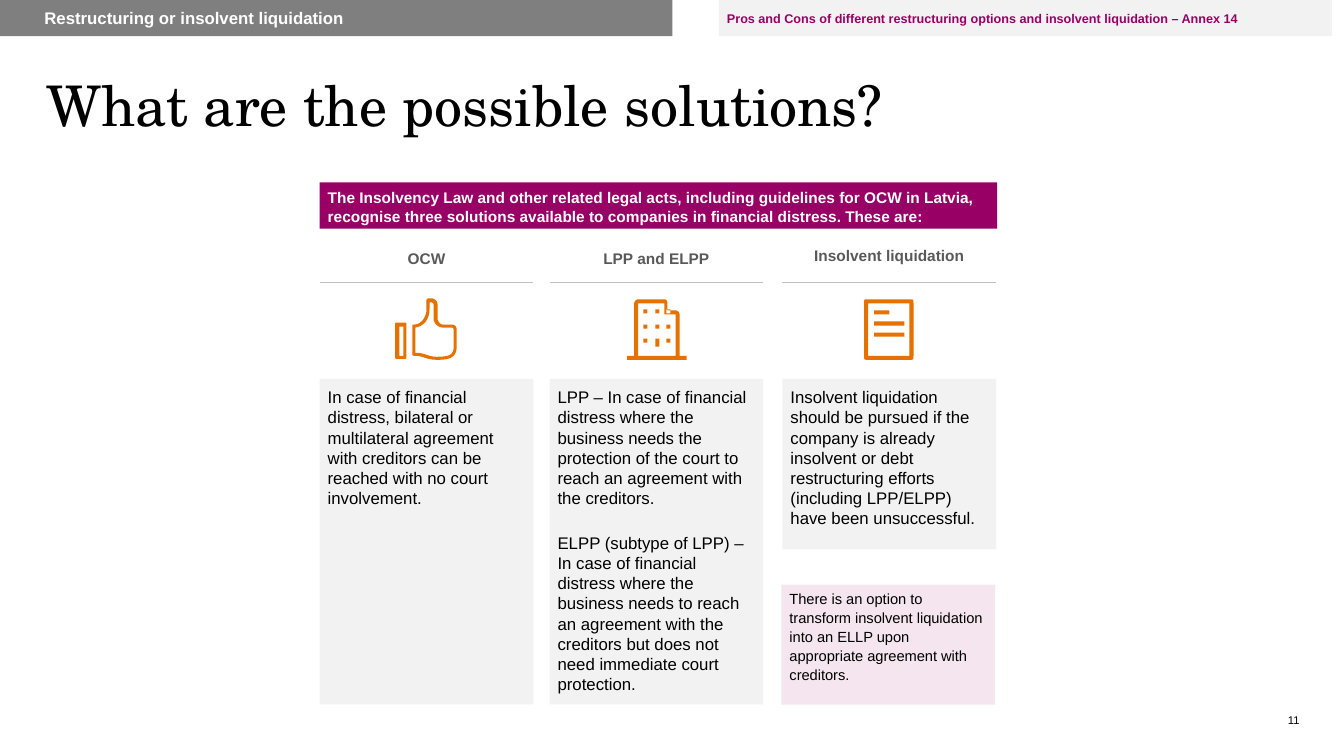
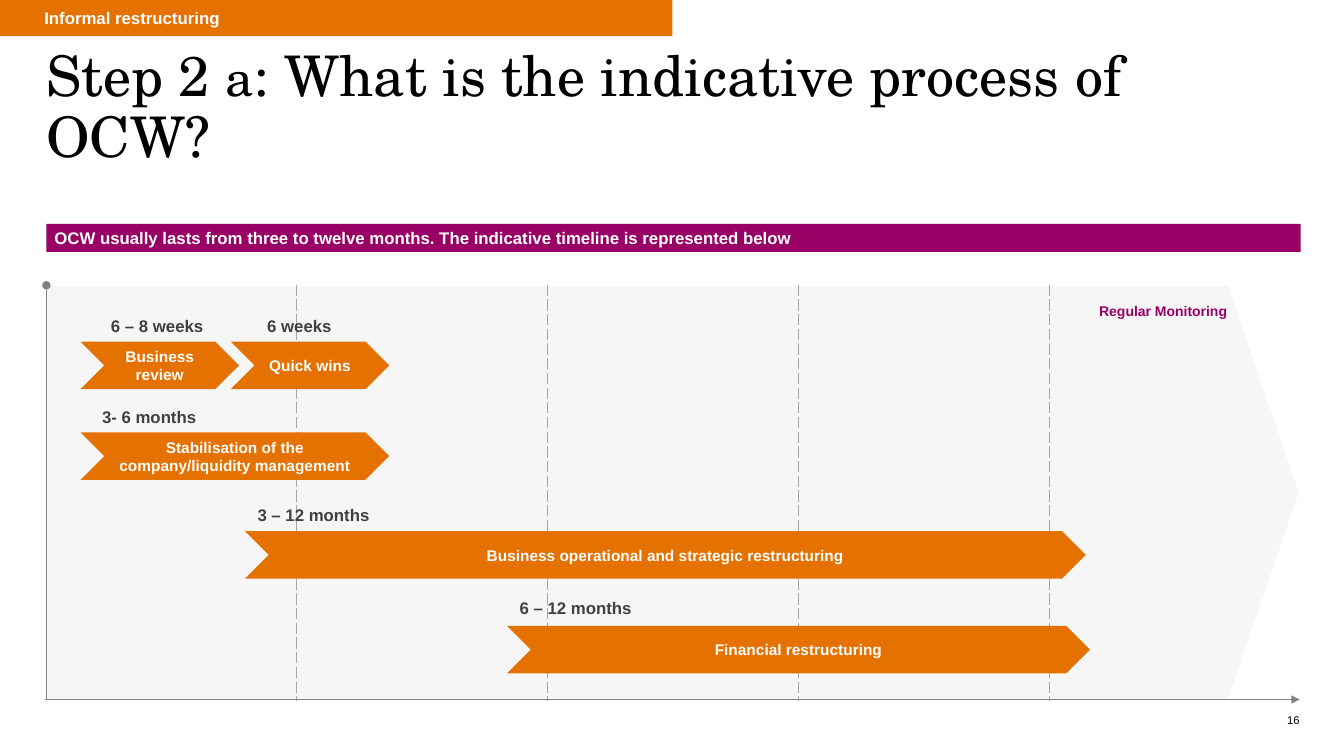
"""Build two slides on restructuring: the possible solutions and the OCW timeline."""
from dataclasses import dataclass
from typing import Any, Optional

from lxml import etree
from pptx import Presentation
from pptx.dml.color import RGBColor
from pptx.enum.shapes import MSO_CONNECTOR, MSO_SHAPE
from pptx.enum.text import MSO_ANCHOR, MSO_AUTO_SIZE, PP_ALIGN
from pptx.oxml.ns import qn
from pptx.util import Pt

PX = 9144
RECT, PLATE, CHEVRON = MSO_SHAPE.RECTANGLE, MSO_SHAPE.PENTAGON, MSO_SHAPE.CHEVRON
STRAIGHT, FIXED = MSO_CONNECTOR.STRAIGHT, MSO_AUTO_SIZE.NONE
TOP, MIDDLE = MSO_ANCHOR.TOP, MSO_ANCHOR.MIDDLE
LEFT, CENTER, RIGHT = PP_ALIGN.LEFT, PP_ALIGN.CENTER, PP_ALIGN.RIGHT

BLACK = RGBColor(0, 0, 0)
WHITE = RGBColor(255, 255, 255)
PLUM = RGBColor(0x99, 0x00, 0x66)
ORANGE = RGBColor(0xE5, 0x71, 0x00)
PALE = RGBColor(0xF2, 0xF2, 0xF2)
SILVER = RGBColor(0xD9, 0xD9, 0xD9)
RULE = RGBColor(0xBF, 0xBF, 0xBF)
DASH = RGBColor(0xA6, 0xA6, 0xA6)
AXIS = RGBColor(0x80, 0x80, 0x80)
BAND = RGBColor(0x7F, 0x7F, 0x7F)
HEAD = RGBColor(0x59, 0x59, 0x59)
DARK = RGBColor(0x40, 0x40, 0x40)

Path = list[tuple[float, ...]]


@dataclass(frozen=True)
class Look:
    """Font and paragraph settings of a text."""
    size: float
    color: RGBColor
    bold: bool = False
    align: Any = LEFT
    anchor: Any = TOP
    inset: tuple[int, ...] = (0, 0, 0, 0)
    after: float = 0
    before: float = 0
    pitch: float = 1.0
    font: str = "Arial"


@dataclass(frozen=True)
class Box:
    """A text box, or a shape when a kind is given."""
    at: tuple[int, int, int, int]
    look: Look
    texts: tuple[str, ...] = ()
    fill: Optional[RGBColor] = None
    kind: Any = None
    alpha: int = 100


@dataclass(frozen=True)
class Line:
    """A straight line with optional ends."""
    start: tuple[int, int]
    stop: tuple[int, int]
    color: RGBColor
    width: float
    head: str = ""
    tail: str = ""


@dataclass(frozen=True)
class Step:
    """A timeline step with its duration label."""
    left: int
    top: int
    width: int
    name: str
    time: str
    label: tuple[int, int]


TITLE = Look(40, BLACK, anchor=MIDDLE, pitch=0.9, font="TeX Gyre Schola")
PAGE = Look(8, BLACK, align=RIGHT, anchor=MIDDLE)
TAB = Look(12, WHITE, True, anchor=MIDDLE, inset=(44, 8, 10, 8))
ANNEX = Look(9, PLUM, True, anchor=MIDDLE, inset=(8, 5, 8, 5))
LEAD = Look(11, WHITE, True, inset=(8, 4, 8, 4), after=8, pitch=1.07)
SPAN = Look(12, WHITE, True, inset=(8, 4, 8, 4), after=8)
BODY = Look(12, BLACK, inset=(8, 8, 8, 8), after=1.7, before=16)
NOTE = Look(10.5, BLACK, inset=(8, 4, 8, 4), after=8, pitch=1.07)
CAP = Look(11, HEAD, True, CENTER, after=1.7)
STEP = Look(11, WHITE, True, CENTER, MIDDLE, (10, 5, 10, 5))
TIME = Look(12, DARK, True, CENTER, inset=(10, 5, 10, 5), after=2)
WATCH = Look(10, PLUM, True, CENTER, inset=(0, 5, 10, 5))

COLUMNS = (
    (317, 247, "OCW", 323,
     ("In case of financial distress, bilateral or multilateral agreement with "
      "creditors can be reached with no court involvement.",)),
    (545, 247, "LPP and ELPP", 323,
     ("LPP – In case of financial distress where the business needs the "
      "protection of the court to reach an agreement with the creditors.",
      "ELPP (subtype of LPP) – In case of financial distress where the business "
      "needs to reach an agreement with the creditors but does not need "
      "immediate court protection.")),
    (776, 244, "Insolvent liquidation", 169,
     ("Insolvent liquidation should be pursued if the company is already "
      "insolvent or debt restructuring efforts (including LPP/ELPP) have been "
      "unsuccessful.",)),
)

STEPS = (
    Step(80, 339, 157, "Business review", "6 – 8 weeks", (88, 308)),
    Step(229, 339, 157, "Quick wins", "6 weeks", (229, 308)),
    Step(80, 429, 306, "Stabilisation of the company/liquidity management",
         "3- 6 months", (80, 399)),
    Step(243, 527, 834, "Business operational and strategic restructuring",
         "3 – 12 months", (243, 496)),
    Step(503, 621, 578, "Financial restructuring", "6 – 12 months", (503, 588)),
)


def block(x: int, y: int, w: int, h: int) -> Path:
    """Return the outline of a rectangle."""
    return [(x, y), (x + w, y), (x + w, y + h), (x, y + h)]


def frame(x: int, y: int, w: int, h: int, r: int) -> Path:
    """Return the outline of a rectangle with round corners."""
    a, b = x + w, y + h
    return [(x + r, y), (a - r, y), (a, y, a, y, a, y + r), (a, b - r),
            (a, b, a, b, a - r, b), (x + r, b), (x, b, x, b, x, b - r),
            (x, y + r), (x, y, x, y, x + r, y)]


THUMB: list[Path] = [
    frame(392, 320, 11, 36, 2),
    block(396, 324, 4, 29),
    [(448, 322), (439, 322), (437, 322, 434, 319, 434, 316), (434, 302),
     (434, 299, 431, 296, 428, 296), (425, 296), (424, 296, 423, 297, 423, 298),
     (423, 307), (423, 314, 418, 322, 411, 322), (410, 322, 409, 322, 409, 323),
     (409, 351), (409, 353, 410, 353, 411, 353), (420, 353, 423, 357, 433, 357),
     (444, 357, 453, 356, 453, 344), (453, 327), (453, 324, 451, 322, 448, 322)],
    [(433, 354), (429, 354, 426, 353, 423, 352), (420, 351, 417, 350, 412, 350),
     (412, 325), (420, 324, 426, 317, 426, 307), (426, 300), (428, 300),
     (429, 300, 430, 301, 430, 302), (430, 316), (430, 321, 435, 325, 439, 325),
     (448, 325), (449, 325, 450, 326, 450, 327), (450, 344),
     (450, 352, 446, 354, 433, 354)],
]
TOWER: list[Path] = [
    [(674, 353), (674, 312), (674, 310, 672, 308, 670, 308), (662, 308),
     (662, 301), (662, 299, 661, 297, 659, 297), (633, 297),
     (631, 297, 629, 299, 629, 301), (629, 353), (622, 353), (622, 357),
     (681, 357), (681, 353)],
    [(670, 353), (633, 353), (633, 301), (659, 301), (659, 312), (670, 312)],
    *[block(x, y, 4, 8 if (x, y) == (650, 336) else 4)
      for x in (638, 650, 661) for y in (307, 322, 336) if (x, y) != (661, 307)],
    block(661, 307, 4, 4),
]
PAPER: list[Path] = [
    frame(857, 297, 49, 60, 4), block(861, 301, 41, 52),
    *[block(867, y, w, 4) for y, w in ((308, 15), (319, 30), (330, 30))],
]


def trace(path: Path) -> list[tuple[int, int]]:
    """Turn lines and curves into points in EMU."""
    spots = [path[0]]
    for leg in path[1:]:
        if len(leg) == 2:
            spots.append(leg)
            continue
        ends = (spots[-1], leg[:2], leg[2:4], leg[4:])
        for n in range(1, 9):
            t = n / 8
            mix = ((1 - t) ** 3, 3 * t * (1 - t) ** 2, 3 * t * t * (1 - t), t ** 3)
            spots.append(tuple(sum(m * e[i] for m, e in zip(mix, ends))
                               for i in (0, 1)))
    return [(round(x * PX), round(y * PX)) for x, y in spots]


def icon(slide: Any, paths: list[Path]) -> None:
    """Draw an icon as one freeform with holes."""
    pen = None
    for path in paths:
        first, *rest = trace(path)
        if pen is None:
            pen = slide.shapes.build_freeform(*first, scale=1.0)
        else:
            pen.move_to(*first)
        pen.add_line_segments(rest, close=True)
    shape = pen.convert_to_shape()
    shape.shadow.inherit = False
    shape.fill.solid()
    shape.fill.fore_color.rgb = ORANGE
    shape.line.fill.background()


def add_run(para: Any, text: str, look: Look, size: float) -> None:
    """Add one run in the given look."""
    run = para.add_run()
    run.text = text
    font = run.font
    font.name, font.size, font.bold = look.font, Pt(size), look.bold
    font.color.rgb = look.color


def set_up(text: Any, look: Look) -> None:
    """Set wrapping, anchor and insets of a text frame."""
    text.word_wrap, text.auto_size = True, FIXED
    text.vertical_anchor = look.anchor
    (text.margin_left, text.margin_top,
     text.margin_right, text.margin_bottom) = (n * PX for n in look.inset)


def set_para(para: Any, look: Look, first: bool) -> None:
    """Set alignment and spacing of a paragraph."""
    para.alignment, para.line_spacing = look.align, look.pitch
    para.space_before = Pt(0 if first else look.before)
    para.space_after = Pt(look.after)


def draw(slide: Any, box: Box) -> Any:
    """Draw a box with its text and return the shape."""
    at = [n * PX for n in box.at]
    if box.kind is None:
        shape = slide.shapes.add_textbox(*at)
    else:
        shape = slide.shapes.add_shape(box.kind, *at)
        shape.shadow.inherit = False
        shape.line.fill.background()
        shape.fill.solid()
        shape.fill.fore_color.rgb = box.fill
        if box.alpha < 100:
            tint = shape.fill._xPr.find(".//" + qn("a:srgbClr"))
            etree.SubElement(tint, qn("a:alpha"), val=str(box.alpha * 1000))
    text = shape.text_frame
    set_up(text, box.look)
    for n, words in enumerate(box.texts):
        para = text.add_paragraph() if n else text.paragraphs[0]
        set_para(para, box.look, n == 0)
        add_run(para, words, box.look, box.look.size)
    return shape


def rule(slide: Any, line: Line) -> None:
    """Draw a straight line."""
    ends = [n * PX for n in line.start + line.stop]
    wire = slide.shapes.add_connector(STRAIGHT, *ends)
    wire.line.color.rgb, wire.line.width = line.color, Pt(line.width)
    for tag, kind in (("a:headEnd", line.head), ("a:tailEnd", line.tail)):
        if kind:
            etree.SubElement(wire.line._get_or_add_ln(), qn(tag), type=kind)
    etree.SubElement(wire._element.spPr, qn("a:effectLst"))


def edge(cell: Any, side: str, color: RGBColor, width: float, dash: str) -> None:
    """Add one border to a table cell."""
    line = etree.SubElement(cell._tc.get_or_add_tcPr(), qn("a:ln" + side),
                            w=str(Pt(width)))
    fill = etree.SubElement(line, qn("a:solidFill"))
    etree.SubElement(fill, qn("a:srgbClr"), val=str(color))
    etree.SubElement(line, qn("a:prstDash"), val=dash)


def grid(slide: Any, count: int) -> None:
    """Draw the timeline grid with dashed inner borders."""
    at = [n * PX for n in (45, 283, 249 * count, 411)]
    table = slide.shapes.add_table(1, count, *at).table
    table.first_row = table.horz_banding = False
    for n, cell in enumerate(table.iter_cells()):
        for side, outer in (("L", n == 0), ("R", n == count - 1)):
            look = (WHITE, 1, "solid") if outer else (DASH, 1, "sysDash")
            edge(cell, side, *look)
        edge(cell, "T", WHITE, 1, "solid")
        edge(cell, "B", WHITE, 3, "solid")
        cell.fill.background()


def start(deck: Any, runs: tuple[tuple[str, int], ...], tab: str,
          color: RGBColor, page: str) -> Any:
    """Add a slide with title, top band and page number."""
    slide = deck.slides.add_slide(deck.slide_layouts[5])
    title = slide.shapes.title
    title.left, title.top, title.width, title.height = (
        n * PX for n in (46, 36, 1243, 144))
    set_up(title.text_frame, TITLE)
    para = title.text_frame.paragraphs[0]
    set_para(para, TITLE, True)
    for words, size in runs:
        add_run(para, words, TITLE, size)
    draw(slide, Box((989, 708, 300, 13), PAGE, (page,)))
    draw(slide, Box((0, 0, 667, 36), TAB, (tab,), color, RECT))
    return slide


def options(deck: Any) -> None:
    """Build the slide on possible solutions."""
    slide = start(deck, (("What are the possible solutions?", 40),),
                  "Restructuring or insolvent liquidation", BAND, "11")
    draw(slide, Box((713, 0, 608, 36), ANNEX, (
        "Pros and Cons of different restructuring options and insolvent "
        "liquidation – Annex 14",), PALE, RECT))
    draw(slide, Box((317, 181, 672, 46), LEAD, (
        "The Insolvency Law and other related legal acts, including guidelines "
        "for OCW in Latvia, recognise three solutions available to companies in "
        "financial distress. These are:",), PLUM, RECT))
    for left, top, name, height, texts in COLUMNS:
        draw(slide, Box((left, top, 212, 19), CAP, (name,)))
        rule(slide, Line((left, 280), (left + 212, 280), RULE, 0.25))
        draw(slide, Box((left, 376, 212, height), BODY, texts, PALE, RECT))
    for paths in (THUMB, TOWER, PAPER):
        icon(slide, paths)
    draw(slide, Box((775, 580, 212, 119), NOTE, (
        "There is an option to transform insolvent liquidation into an ELLP upon "
        "appropriate agreement with creditors.",), PLUM, RECT, 10))


def process(deck: Any) -> None:
    """Build the slide on the OCW timeline."""
    slide = start(deck, (("Step 2 ", 40), ("a", 36),
                         (": What is the indicative process of OCW?", 40)),
                  "Informal restructuring", ORANGE, "16")
    plate = draw(slide, Box((47, 283, 1241, 411), STEP, (), SILVER, PLATE, 22))
    plate.adjustments[0] = 0.17
    grid(slide, 5)
    rule(slide, Line((45, 694), (1289, 694), AXIS, 0.5, tail="triangle"))
    rule(slide, Line((46, 283), (46, 694), AXIS, 0.5, head="oval"))
    for step in STEPS:
        draw(slide, Box((step.left, step.top, step.width, 47), STEP,
                        (step.name,), ORANGE, CHEVRON))
        draw(slide, Box((*step.label, 136, 30), TIME, (step.time,)))
    draw(slide, Box((1046, 295, 225, 27), WATCH, ("Regular Monitoring",)))
    draw(slide, Box((46, 222, 1244, 28), SPAN, (
        "OCW usually lasts from three to twelve months. The indicative timeline "
        "is represented below",), PLUM, RECT))


def main() -> None:
    """Build and save the deck."""
    deck = Presentation()
    deck.slide_width, deck.slide_height = 1333 * PX, 750 * PX
    options(deck)
    process(deck)
    deck.save("out.pptx")


if __name__ == "__main__":
    main()
